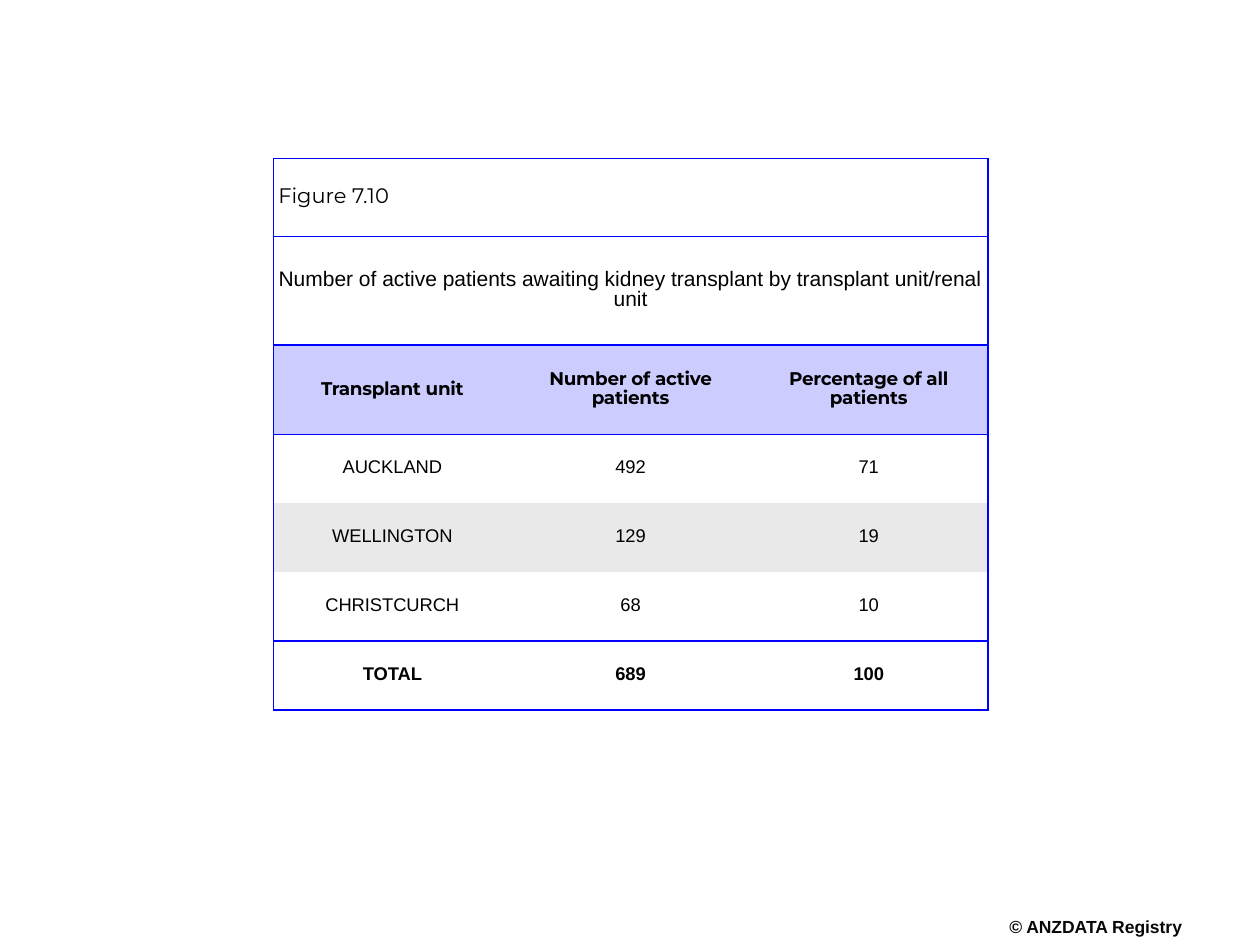
import pptx
import pptx.dml.color
import pptx.enum.text
import pptx.oxml
import pptx.oxml.ns
import pptx.util

Pt = pptx.util.Pt
ALIGN = pptx.enum.text.PP_ALIGN
MIDDLE = pptx.enum.text.MSO_ANCHOR.MIDDLE

COLOURS = {
    "text": "000000",
    "footer": "080808",
    "rule": "0000FF",
    "white": "FFFFFF",
    "header": "CCCCFF",
    "band": "E9E9E9",
}

ROWS = [
    ["Figure 7.10"],
    ["Number of active patients awaiting kidney transplant by transplant unit/renal unit"],
    ["Transplant unit", "Number of active patients", "Percentage of all patients"],
    ["AUCKLAND", "492", "71"],
    ["WELLINGTON", "129", "19"],
    ["CHRISTCURCH", "68", "10"],
    ["TOTAL", "689", "100"],
]
ROW_HEIGHTS = [44.6, 62, 51.1] + [39.4] * 4
COLUMN_WIDTH = 136.1
COLUMN_COUNT = 3
RULED_EDGES = {0, 1, 2, 3, 6, 7}  # row boundaries that carry a line

BODY = {"size": 10.5, "after": 14}
HEADING = {"size": 12, "after": 2.7, "fill": "white"}
ROW_STYLES = [
    {**HEADING, "font": "Montserrat", "align": ALIGN.LEFT},
    {**HEADING, "margin": 1.44},
    {"size": 10.5, "after": 2.7, "fill": "header", "font": "Montserrat",
     "bold": True, "margin": 1.44, "tracking": -10},
    BODY,
    {**BODY, "fill": "band"},
    BODY,
    {**BODY, "bold": True},
]


class SlideBuilder:
    def __init__(self, page):
        self.page = page

    def paragraph(self, para, text, size, font="Arial", bold=False, align=ALIGN.CENTER,
                  after=0, colour="text", tracking=0):
        span = para.add_run()
        span.text = text
        if tracking:
            span._r.get_or_add_rPr().set("spc", str(tracking))
        para.alignment = align
        para.line_spacing = 0.85
        para.space_before = Pt(0)
        para.space_after = Pt(after)
        para.font.name = font
        para.font.size = Pt(size)
        para.font.bold = bold
        para.font.color.rgb = pptx.dml.color.RGBColor.from_string(COLOURS[colour])

    def text(self, left, top, width, height, text, **style):
        box = self.page.shapes.add_textbox(Pt(left), Pt(top), Pt(width), Pt(height))
        frame = box.text_frame
        frame.margin_left = frame.margin_right = Pt(0)
        frame.margin_top = frame.margin_bottom = Pt(0)
        frame.vertical_anchor = MIDDLE
        frame.word_wrap = False
        self.paragraph(frame.paragraphs[0], text, **style)

    def border(self, cell, side, shown):
        paint = (f'<a:solidFill><a:srgbClr val="{COLOURS["rule"]}"/></a:solidFill>'
                 if shown else "<a:noFill/>")
        cell._tc.get_or_add_tcPr().append(pptx.oxml.parse_xml(
            f'<a:ln{side} {pptx.oxml.ns.nsdecls("a")} w="{Pt(1)}">{paint}</a:ln{side}>'))

    def cell(self, cell, text, fill=None, margin=2.88, **style):
        cell.margin_left = cell.margin_right = Pt(2.88)
        cell.margin_top = cell.margin_bottom = Pt(margin)
        cell.vertical_anchor = MIDDLE
        if fill:
            cell.fill.solid()
            cell.fill.fore_color.rgb = pptx.dml.color.RGBColor.from_string(COLOURS[fill])
        else:
            cell.fill.background()
        if text:
            self.paragraph(cell.text_frame.paragraphs[0], text, **style)

    def table(self, left, top):
        table = self.page.shapes.add_table(
            len(ROWS), COLUMN_COUNT, Pt(left), Pt(top),
            Pt(COLUMN_WIDTH * COLUMN_COUNT), Pt(sum(ROW_HEIGHTS))).table
        table.first_row = table.horz_banding = False
        for column in table.columns:
            column.width = Pt(COLUMN_WIDTH)
        last = COLUMN_COUNT - 1
        for row, (texts, height, style) in enumerate(zip(ROWS, ROW_HEIGHTS, ROW_STYLES)):
            table.rows[row].height = Pt(height)
            if len(texts) == 1:
                table.cell(row, 0).merge(table.cell(row, last))
            for column in range(COLUMN_COUNT):
                cell = table.cell(row, column)
                self.border(cell, "L", column == 0)
                self.border(cell, "R", column == last or cell.is_merge_origin)
                self.border(cell, "T", row in RULED_EDGES)
                self.border(cell, "B", row + 1 in RULED_EDGES)
                self.cell(cell, texts[column] if column < len(texts) else "", **style)


def main():
    deck = pptx.Presentation()
    deck.slide_width, deck.slide_height = Pt(720), Pt(540)
    builder = SlideBuilder(deck.slides.add_slide(deck.slide_layouts[6]))
    builder.text(575.3, 524.2, 101.5, 12.2, "© ANZDATA Registry",
                 size=10, bold=True, colour="footer")
    builder.table(156.2, 90.5)
    deck.save("out.pptx")


if __name__ == "__main__":
    main()
